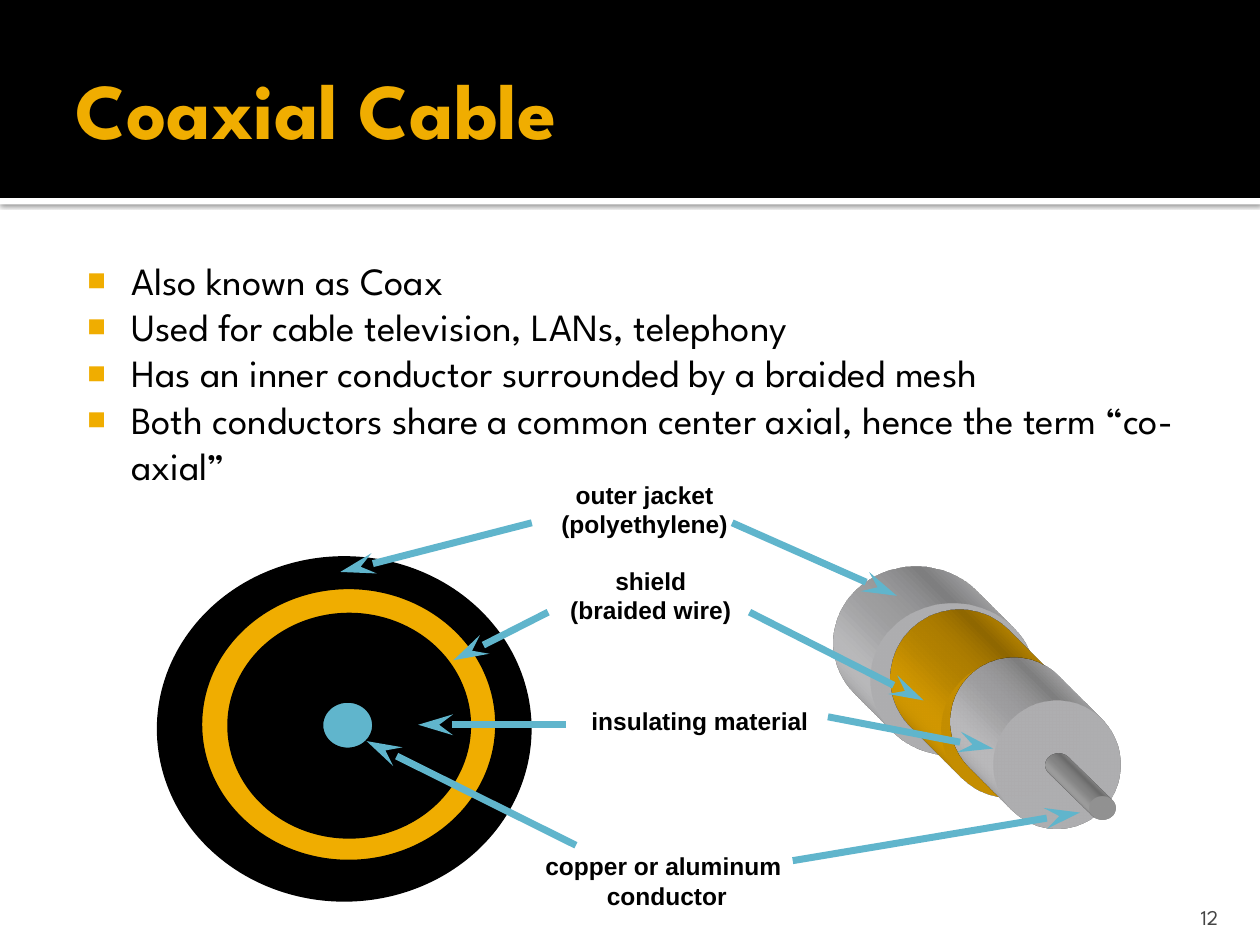
from lxml import etree
from pptx import Presentation
from pptx.dml.color import RGBColor
from pptx.enum.shapes import MSO_CONNECTOR, MSO_SHAPE
from pptx.enum.text import MSO_ANCHOR, MSO_AUTO_SIZE, PP_ALIGN
from pptx.oxml import parse_xml
from pptx.oxml.ns import qn
from pptx.util import Cm, Pt

OVAL, RECT = MSO_SHAPE.OVAL, MSO_SHAPE.RECTANGLE
LINE = MSO_CONNECTOR.STRAIGHT
MID, LOW = MSO_ANCHOR.MIDDLE, MSO_ANCHOR.BOTTOM
MIDDLE, RIGHT = PP_ALIGN.CENTER, PP_ALIGN.RIGHT
FIXED = MSO_AUTO_SIZE.NONE
NS = 'xmlns:a="http://schemas.openxmlformats.org/drawingml/2006/main"'
GOLD, BLUE, BLACK, WHITE = "F0AD00", "60B5CC", "000000", "FFFFFF"
SANS = "League Spartan"


def paint(target, color):
    if hasattr(target, "solid"):
        target.solid()
        target = target.fore_color
    target.rgb = RGBColor.from_string(color)


def style(frame, face, size, color, bold=False, align=None):
    for para in frame.paragraphs:
        para.alignment = align
        for run in para.runs:
            run.font.name, run.font.size, run.font.bold = face, Pt(size), bold
            paint(run.font.color, color)


deck = Presentation()
deck.slide_width, deck.slide_height = Cm(25.4), Cm(19.05)
slide = deck.slides.add_slide(deck.slide_layouts[1])
shapes = slide.shapes
title, body = slide.placeholders

for top, high, color in [(3.99, 0.13, WHITE), (0, 3.99, BLACK)]:
    band = shapes.add_shape(RECT, 0, Cm(top), deck.slide_width, Cm(high))
    paint(band.fill, color)
    band.line.fill.background()
    band.shadow.inherit = False
    title.element.addprevious(band.element)
    if color == WHITE:
        effects = band.element.spPr.find(qn("a:effectLst"))
        effects.append(parse_xml(
            f'<a:outerShdw {NS} blurRad="31750" dist="10160" dir="5400000">'
            '<a:srgbClr val="000000"><a:alpha val="60000"/></a:srgbClr></a:outerShdw>'))

title.left, title.top, title.width, title.height = Cm(1.27), Cm(0.43), Cm(22.86), Cm(3.48)
frame = title.text_frame
frame.text = "Coaxial Cable"
frame.auto_size, frame.vertical_anchor = FIXED, MID
frame.margin_left, frame.margin_right = Cm(0.25), Cm(0.13)
style(frame, SANS, 45, GOLD, True, PP_ALIGN.LEFT)

body.left, body.top, body.width, body.height = Cm(1.27), Cm(4.93), Cm(22.86), Cm(5.23)
frame = body.text_frame
frame.text = "\n".join([
    "Also known as Coax",
    "Used for cable television, LANs, telephony",
    "Has an inner conductor surrounded by a braided mesh",
    "Both conductors share a common center axial, hence the term “co-axial”",
])
frame.auto_size = FIXED
frame.margin_left, frame.margin_top = Cm(0.16), Cm(0.25)
for para in frame.paragraphs:
    para.space_before = Pt(0)
    props = para._p.get_or_add_pPr()
    props.set("marL", str(Cm(1.22)))
    props.set("indent", str(-Cm(0.89)))
    tint = etree.SubElement(props, qn("a:buClr"))
    etree.SubElement(tint, qn("a:srgbClr"), val=GOLD)
    etree.SubElement(props, qn("a:buSzPct"), val="80000")
    etree.SubElement(props, qn("a:buFont"), typeface="Arial")
    etree.SubElement(props, qn("a:buChar"), char="■")
style(frame, SANS, 22, BLACK)

cut, view = shapes.add_group_shape(), shapes.add_group_shape()

rings = [
    (3.18, 11.23, 7.52, 6.93, BLACK),
    (4.06, 11.86, 5.94, 5.49, GOLD),
    (4.6, 12.37, 4.88, 4.52, BLACK),
    (6.5, 14.15, 1.02, 0.94, BLUE),
]
for x, y, w, h, color in rings:
    ring = cut.shapes.add_shape(OVAL, Cm(x), Cm(y), Cm(w), Cm(h))
    paint(ring.fill, color)
    paint(ring.line.fill, BLACK)
    ring.line.width = Pt(1)
    ring.shadow.inherit = False

tubes = [
    (17.55, 12.17, 3.33, 3.07, 2.1, "D4D4D6"),
    (18.97, 13.31, 2.79, 2.77, 2.9, GOLD),
    (20.02, 14.12, 2.57, 2.59, 2.45, "D4D4D6"),
    (21.95, 16.05, 0.53, 0.48, 2.45, "B2B2B2"),
]
for x, y, w, h, depth, color in tubes:
    tube = view.shapes.add_shape(OVAL, Cm(x), Cm(y), Cm(w), Cm(h))
    paint(tube.fill, color)
    tube.line.fill.background()
    tube.shadow.inherit = False
    props = tube.element.spPr
    props.append(parse_xml(
        f'<a:scene3d {NS}><a:camera prst="legacyObliqueTopLeft"/>'
        '<a:lightRig rig="legacyFlat3" dir="b"/></a:scene3d>'))
    props.append(parse_xml(
        f'<a:sp3d {NS} extrusionH="{Cm(depth)}" prstMaterial="legacyMatte">'
        f'<a:extrusionClr><a:srgbClr val="{color}"/></a:extrusionClr></a:sp3d>'))

arrows = [
    (cut, 8.43, 14.61, 11.4, 14.61), (cut, 9.14, 13.31, 11.05, 12.34),
    (cut, 7.39, 14.94, 11.61, 17.04), (cut, 6.86, 11.53, 10.72, 10.54),
    (view, 18.08, 12.01, 14.76, 10.54), (view, 18.62, 14.12, 15.11, 12.34),
    (view, 20.02, 15.09, 16.69, 14.45), (view, 21.77, 16.38, 15.98, 17.35),
]
for group, *ends in arrows:
    arrow = group.shapes.add_connector(LINE, *map(Cm, ends))
    paint(arrow.line.fill, BLUE)
    arrow.line.width = Pt(4)
    etree.SubElement(arrow.line._get_or_add_ln(), qn("a:headEnd"),
                     type="stealth", w="med", len="lg")
    etree.SubElement(arrow.element.spPr, qn("a:effectLst"))

labels = [
    (10.72, 17.04, 5.31, 1.45, "copper or aluminum\n conductor"),
    (11.66, 14.1, 4.9, 0.86, "insulating material"),
    (11.23, 11.28, 3.78, 1.45, "shield\v(braided wire)"),
    (11.05, 9.55, 3.89, 1.45, "outer jacket\n(polyethylene)"),
]
for x, y, w, h, text in labels:
    frame = shapes.add_textbox(Cm(x), Cm(y), Cm(w), Cm(h)).text_frame
    frame.text = text
    frame.word_wrap = False
    style(frame, "Arial", 14, BLACK, True, MIDDLE)

frame = shapes.add_textbox(Cm(22.78), Cm(17.98), Cm(2.03), Cm(0.76)).text_frame
frame.text = "12"
frame.word_wrap, frame.vertical_anchor, frame.margin_bottom = True, LOW, 0
style(frame, SANS, 12, "454545", False, RIGHT)

deck.save("out.pptx")
